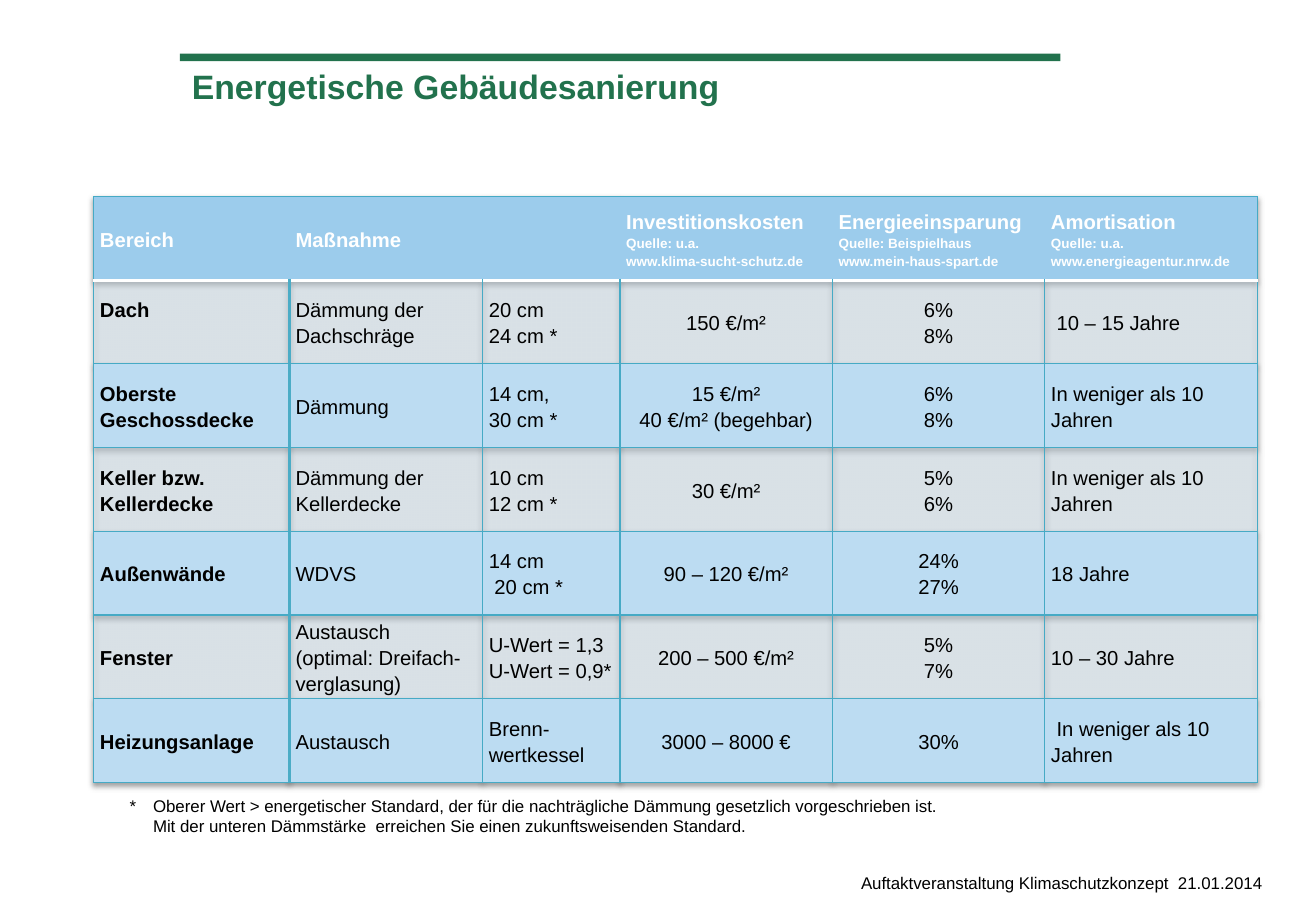
from dataclasses import dataclass
from typing import Optional

from lxml import etree
from pptx import Presentation
from pptx.dml.color import RGBColor
from pptx.enum import shapes, text
from pptx.oxml import ns
from pptx.util import Cm, Pt


@dataclass(frozen=True)
class Theme:
    """Colours and type sizes of the slide."""
    font: str = "Arial"
    green: str = "22724D"
    black: str = "000000"
    white: str = "FFFFFF"
    header: str = "9CCCEC"
    light_band: str = "D5E9F7"
    light_opacity: int = 40
    blue_band: str = "BCDCF2"
    grid: str = "46AAC5"
    divider: str = "4BACC6"
    title_size: int = 20
    table_size: int = 12
    note_size: int = 10
    source_size: int = 8
    thin: float = 0.75
    thick: float = 2


@dataclass(frozen=True)
class Label:
    """A free text box with its place in centimetres."""
    content: str
    left: float
    top: float
    width: float
    height: float
    size: int
    colour: str
    bold: bool = False
    hanging: float = 0


@dataclass(frozen=True)
class Border:
    """A cell edge; without a colour the edge is invisible."""
    colour: Optional[str] = None
    width: float = 0.75


THEME = Theme()
HEADER = [
    "Bereich",
    "Maßnahme",
    "",
    "Investitionskosten\nQuelle: u.a.\nwww.klima-sucht-schutz.de",
    "Energieeinsparung\nQuelle: Beispielhaus\nwww.mein-haus-spart.de",
    "Amortisation\nQuelle: u.a.\nwww.energieagentur.nrw.de",
]
MEASURES = [
    ["Dach", "Dämmung der Dachschräge", "20 cm\n24 cm *", "150 €/m²", "6%\n8%", " 10 – 15 Jahre"],
    ["Oberste Geschossdecke", "Dämmung", "14 cm,\n30 cm *", "15 €/m²\n40 €/m² (begehbar)",
     "6%\n8%", "In weniger als 10 Jahren"],
    ["Keller bzw. Kellerdecke", "Dämmung der Kellerdecke", "10 cm\n12 cm *", "30 €/m²",
     "5%\n6%", "In weniger als 10 Jahren"],
    ["Außenwände", "WDVS", "14 cm\n 20 cm *", "90 – 120 €/m²", "24%\n27%", "18 Jahre"],
    ["Fenster", "Austausch\n(optimal: Dreifach-verglasung)", "U-Wert = 1,3\nU-Wert = 0,9*",
     "200 – 500 €/m²", "5%\n7%", "10 – 30 Jahre"],
    ["Heizungsanlage", "Austausch", "Brenn-wertkessel", "3000 – 8000 €", "30%",
     " In weniger als 10 Jahren"],
]
COLUMN_WIDTHS = [4.09, 4.04, 2.87, 4.44, 4.44, 4.44]
ROW_HEIGHT = 1.75
CENTRED_COLUMNS = (3, 4)
LABELS = [
    Label("Energetische Gebäudesanierung", 3.76, 1.26, 18.19, 2.36,
          THEME.title_size, THEME.green, bold=True),
    Label("*\tOberer Wert > energetischer Standard, der für die nachträgliche Dämmung "
          "gesetzlich vorgeschrieben ist.\vMit der unteren Dämmstärke  erreichen Sie "
          "einen zukunftsweisenden Standard.",
          2.46, 16.51, 23.9, 1.12, THEME.note_size, THEME.black, hanging=0.49),
    Label("Auftaktveranstaltung Klimaschutzkonzept  21.01.2014", 17.75, 18.13, 9.75, 0.79,
          THEME.note_size, THEME.black),
]


def style_paragraph(paragraph, size: int, colour: str, bold: bool) -> None:
    """Give a whole paragraph its type."""
    font = paragraph.font
    font.name, font.size, font.bold = THEME.font, Pt(size), bold
    font.color.rgb = RGBColor.from_string(colour)


def add_label(slide, label: Label) -> None:
    """Draw a text box, with a hanging indent if it has one."""
    box = slide.shapes.add_textbox(*map(Cm, (label.left, label.top, label.width, label.height)))
    box.text_frame.word_wrap = True
    paragraph = box.text_frame.paragraphs[0]
    paragraph.text = label.content
    if label.hanging:
        properties = paragraph._p.get_or_add_pPr()
        properties.set("marL", str(Cm(label.hanging)))
        properties.set("indent", str(-Cm(label.hanging)))
    style_paragraph(paragraph, label.size, label.colour, label.bold)


def set_borders(cell, borders: dict[str, Border]) -> None:
    """Put the edges before the fill of a cell."""
    properties = cell._tc.get_or_add_tcPr()
    for position, side in enumerate("LRTB"):
        border = borders[side]
        line = etree.Element(ns.qn(f"a:ln{side}"), w=str(Pt(border.width)))
        if border.colour:
            fill = etree.SubElement(line, ns.qn("a:solidFill"))
            etree.SubElement(fill, ns.qn("a:srgbClr"), val=border.colour)
        else:
            etree.SubElement(line, ns.qn("a:noFill"))
        properties.insert(position, line)


def cell_borders(row: int, column: int) -> dict[str, Border]:
    """Work out the edges of a cell from its place in the table."""
    grid, hidden = Border(THEME.grid, THEME.thin), Border()
    divider = Border(THEME.divider, THEME.thick)
    header_rule = Border(THEME.white, THEME.thick)
    last = len(COLUMN_WIDTHS) - 1
    if row == 0:
        return {"L": grid if column == 0 else hidden, "R": grid if column == last else hidden,
                "T": grid, "B": header_rule}
    return {"L": divider if column == 1 else grid, "R": divider if column == 0 else grid,
            "T": header_rule if row == 1 else grid, "B": grid}


def fill_cell(cell, row: int, column: int, content: str) -> None:
    """Write and colour one table cell."""
    is_header = row == 0
    is_light = row % 2 == 1
    cell.margin_left = cell.margin_right = Cm(0.13)
    cell.margin_top = cell.margin_bottom = 0
    cell.vertical_anchor = text.MSO_ANCHOR.MIDDLE
    cell.text = content
    for index, paragraph in enumerate(cell.text_frame.paragraphs):
        paragraph.line_spacing = 1.15
        if column in CENTRED_COLUMNS and not is_header:
            paragraph.alignment = text.PP_ALIGN.CENTER
        size = THEME.source_size if is_header and index else THEME.table_size
        style_paragraph(paragraph, size, THEME.white if is_header else THEME.black,
                        is_header or column == 0)
    colour = THEME.header if is_header else THEME.light_band if is_light else THEME.blue_band
    cell.fill.solid()
    cell.fill.fore_color.rgb = RGBColor.from_string(colour)
    if is_light:
        fill_colour = cell._tc.tcPr.find(f"{ns.qn('a:solidFill')}/{ns.qn('a:srgbClr')}")
        etree.SubElement(fill_colour, ns.qn("a:alpha"), val=str(THEME.light_opacity * 1000))
    set_borders(cell, cell_borders(row, column))


def add_table_shadow(table) -> None:
    """Give the table a soft shadow below it."""
    effects = etree.Element(ns.qn("a:effectLst"))
    shadow = etree.SubElement(effects, ns.qn("a:outerShdw"), blurRad=str(Pt(3)),
                              dist=str(Pt(1.8)), dir="5400000", rotWithShape="0")
    colour = etree.SubElement(shadow, ns.qn("a:srgbClr"), val=THEME.black)
    etree.SubElement(colour, ns.qn("a:alpha"), val="35000")
    table._tbl.tblPr.insert(0, effects)


def add_measures_table(slide) -> None:
    """Draw the table of renovation measures."""
    rows = [HEADER, *MEASURES]
    table = slide.shapes.add_table(
        len(rows), len(COLUMN_WIDTHS), Cm(1.96), Cm(4.11),
        Cm(sum(COLUMN_WIDTHS)), Cm(ROW_HEIGHT * len(rows))).table
    table.horz_banding = False
    for column, width in zip(table.columns, COLUMN_WIDTHS):
        column.width = Cm(width)
    for row, contents in enumerate(rows):
        table.rows[row].height = Cm(ROW_HEIGHT)
        for column, content in enumerate(contents):
            fill_cell(table.cell(row, column), row, column, content)
    table.cell(1, 0).margin_bottom = Cm(0.56)
    add_table_shadow(table)


def add_title_bar(slide) -> None:
    """Draw the green bar above the title."""
    bar = slide.shapes.add_shape(shapes.MSO_SHAPE.RECTANGLE,
                                 Cm(3.76), Cm(1.12), Cm(18.41), Cm(0.16))
    bar.shadow.inherit = False
    bar.fill.solid()
    bar.fill.fore_color.rgb = RGBColor.from_string(THEME.green)
    bar.line.fill.background()


def main() -> None:
    """Build and save the slide."""
    presentation = Presentation()
    presentation.slide_width, presentation.slide_height = Cm(27.51), Cm(19.05)
    slide = presentation.slides.add_slide(presentation.slide_layouts[6])
    add_title_bar(slide)
    add_measures_table(slide)
    for label in LABELS:
        add_label(slide, label)
    presentation.save("out.pptx")


if __name__ == "__main__":
    main()
